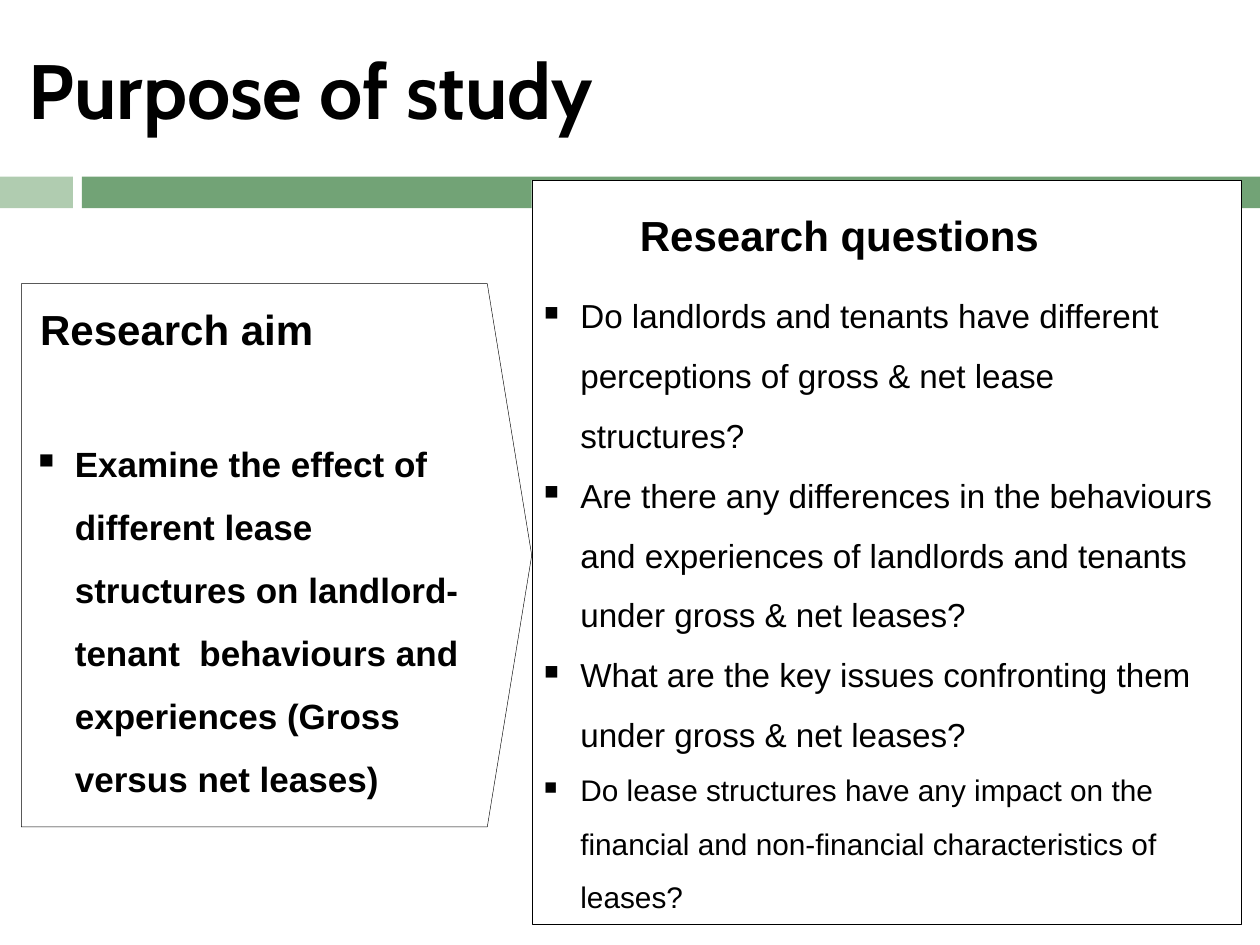
from lxml.etree import SubElement as Sub
from pptx import Presentation
from pptx.dml.color import RGBColor as RGB
from pptx.enum.shapes import MSO_SHAPE as Kind
from pptx.enum.text import MSO_ANCHOR as Anchor, PP_ALIGN as Align
from pptx.oxml.ns import qn
from pptx.util import Cm, Pt

HUES = {"black": "000000", "white": "FFFFFF", "pale": "B0CCB0", "green": "72A376"}
AIM = ("Examine the effect of different lease structures on landlord-tenant  "
       "behaviours and experiences (Gross versus net leases)")
ASKS = [
    ("Do landlords and tenants have different perceptions of gross & net lease structures?", 19),
    ("Are there any differences in the behaviours and experiences of landlords and tenants "
     "under gross & net leases?", 19),
    ("What are the key issues confronting them under gross & net leases?", 19),
    ("Do lease structures have any impact on the financial and non-financial "
     "characteristics of leases?", 17),
]


class Deck:
    face = "Arial"
    hang = Cm(0.73)

    def __init__(self, wide, high):
        self.prs = Presentation()
        self.prs.slide_width, self.prs.slide_height = Cm(wide), Cm(high)
        self.slide = self.prs.slides.add_slide(self.prs.slide_layouts[6])

    def hue(self, name):
        return RGB.from_string(HUES[name])

    def panel(self, box, fill, edge=False, kind=Kind.RECTANGLE):
        shape = self.slide.shapes.add_shape(kind, *map(Cm, box))
        shape.shadow.inherit = False
        shape.fill.solid()
        shape.fill.fore_color.rgb = self.hue(fill)
        if edge:
            shape.line.color.rgb = self.hue("black")
            shape.line.width = Pt(0.25)
        else:
            shape.line.fill.background()
        return shape

    def style(self, par, text, size, bold, face=None):
        par.text = text
        par.alignment = Align.LEFT
        font = par.font
        font.name, font.size, font.bold = face or self.face, Pt(size), bold
        font.color.rgb = self.hue("black")

    def title(self, box, text):
        frame = self.slide.shapes.add_textbox(*map(Cm, box)).text_frame
        frame.word_wrap = True
        frame.vertical_anchor = Anchor.MIDDLE
        self.style(frame.paragraphs[0], text, 44, True, "Cabin")

    def head(self, box, text, inset=True):
        frame = self.panel(box, "white").text_frame
        frame.word_wrap = True
        frame.vertical_anchor = Anchor.TOP
        if not inset:
            frame.margin_left = frame.margin_right = 0
            frame.margin_top = frame.margin_bottom = 0
        par = frame.paragraphs[0]
        self.style(par, text, 24, True)
        par.space_before = Pt(3)

    def points(self, box, items, bold=False):
        frame = self.slide.shapes.add_textbox(*map(Cm, box)).text_frame
        frame.word_wrap = True
        frame.vertical_anchor = Anchor.BOTTOM
        for i, (text, size) in enumerate(items):
            par = frame.add_paragraph() if i else frame.paragraphs[0]
            self.style(par, text, size, bold)
            par.line_spacing = 1.5
            self.bullet(par)

    def bullet(self, par):
        # Square mark with a hanging indent, ahead of the font defaults
        props = par._p.get_or_add_pPr()
        props.set("marL", str(self.hang))
        props.set("indent", str(-self.hang))
        size = Sub(props, qn("a:buSzPct"), val="60000")
        mark = Sub(props, qn("a:buChar"), char="■")
        font = props.find(qn("a:defRPr"))
        if font is not None:
            font.addprevious(size)
            font.addprevious(mark)


def main():
    deck = Deck(25.4, 19.05)

    # Green band
    deck.panel((0, 3.56, 1.47, 0.64), "pale")
    deck.panel((1.65, 3.56, 23.75, 0.64), "green")

    # Panels and title
    deck.panel((10.72, 3.63, 14.3, 15.01), "white", edge=True)
    deck.title((0.33, 0.81, 24.43, 1.96), "Purpose of study")
    arrow = deck.panel((0.43, 5.72, 10.29, 10.95), "white", True, Kind.PENTAGON)
    arrow.adjustments[0] = 0.087

    # Headings
    deck.head((0.81, 6.12, 8.51, 1.02), "Research aim", inset=False)
    deck.head((12.65, 4.09, 10.87, 1.3), "Research questions")

    # Bullet lists
    deck.points((10.72, 3.63, 14.1, 14.94), ASKS)
    deck.points((0.53, 6.32, 9.4, 9.93), [(AIM, 20)], bold=True)

    deck.prs.save("out.pptx")


if __name__ == "__main__":
    main()
